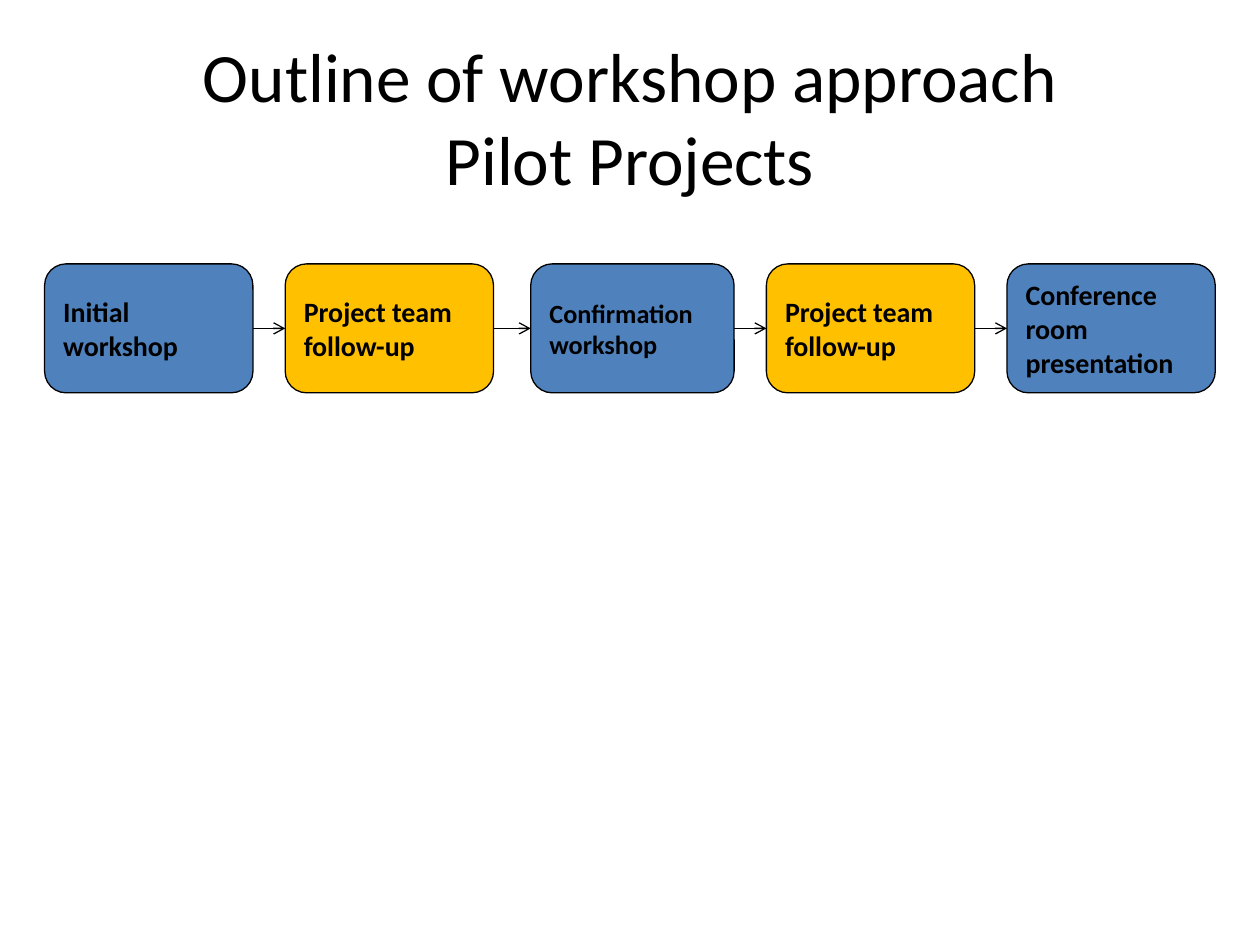
"""Build a slide with a five-step workshop flow."""
from itertools import pairwise
from lxml import etree
from pptx import Presentation
from pptx.dml.color import RGBColor
from pptx.enum.shapes import MSO_CONNECTOR, MSO_SHAPE
from pptx.enum.text import MSO_ANCHOR, PP_ALIGN
from pptx.oxml.ns import qn
from pptx.util import Cm, Pt

ROUND = MSO_SHAPE.ROUNDED_RECTANGLE
STRAIGHT = MSO_CONNECTOR.STRAIGHT
MIDDLE = MSO_ANCHOR.MIDDLE
LEFT, CENTER = PP_ALIGN.LEFT, PP_ALIGN.CENTER
BLACK, BLUE, GOLD = "000000", "4F81BD", "FFC000"
PITCH = 4.85


def paint(color, tint):
    color.rgb = RGBColor.from_string(tint)


def write(para, text, size, bold=False):
    run = para.add_run()
    run.text = text
    run.font.name = "Calibri"
    run.font.size = Pt(size)
    run.font.bold = bold
    paint(run.font.color, BLACK)


deck = Presentation()
deck.slide_width, deck.slide_height = Cm(25.4), Cm(19.05)
slide = deck.slides.add_slide(deck.slide_layouts[5])

title = slide.shapes.title
title.left, title.top = Cm(1.27), Cm(0.76)
title.width, title.height = Cm(22.86), Cm(3.18)
title.text_frame.vertical_anchor = MIDDLE
para = title.text_frame.paragraphs[0]
para.alignment = CENTER
write(para, "Outline of workshop approach", 39.6)
para.add_line_break()
write(para, "Pilot Projects", 39.6)

steps = [
    ("Initial workshop", BLUE, 16, 0),
    ("Project team follow-up", GOLD, 16, 0),
    ("Confirmation workshop", BLUE, 15, 0.1),
    ("Project team follow-up", GOLD, 16, 0),
    ("Conference room presentation", BLUE, 16, 0),
]
boxes = []
for col, (text, tint, size, inset) in enumerate(steps):
    left = 0.9 + col * PITCH + inset
    box = slide.shapes.add_shape(ROUND, Cm(left), Cm(5.32), Cm(4.2 - inset), Cm(2.6))
    box.shadow.inherit = False
    box.fill.solid()
    paint(box.fill.fore_color, tint)
    paint(box.line.color, BLACK)
    box.line.width = Pt(0.75)
    frame = box.text_frame
    frame.word_wrap = True
    frame.vertical_anchor = MIDDLE
    para = frame.paragraphs[0]
    para.alignment = LEFT
    write(para, text, size, True)
    boxes.append(box)

for start, end in pairwise(boxes):
    link = slide.shapes.add_connector(STRAIGHT, 0, 0, 0, 0)
    link.begin_connect(start, 3)
    link.end_connect(end, 1)
    paint(link.line.color, BLACK)
    link.line.width = Pt(0.75)
    etree.SubElement(link.line._get_or_add_ln(), qn("a:tailEnd"), type="arrow")
    etree.SubElement(link._element.spPr, qn("a:effectLst"))

deck.save("out.pptx")
